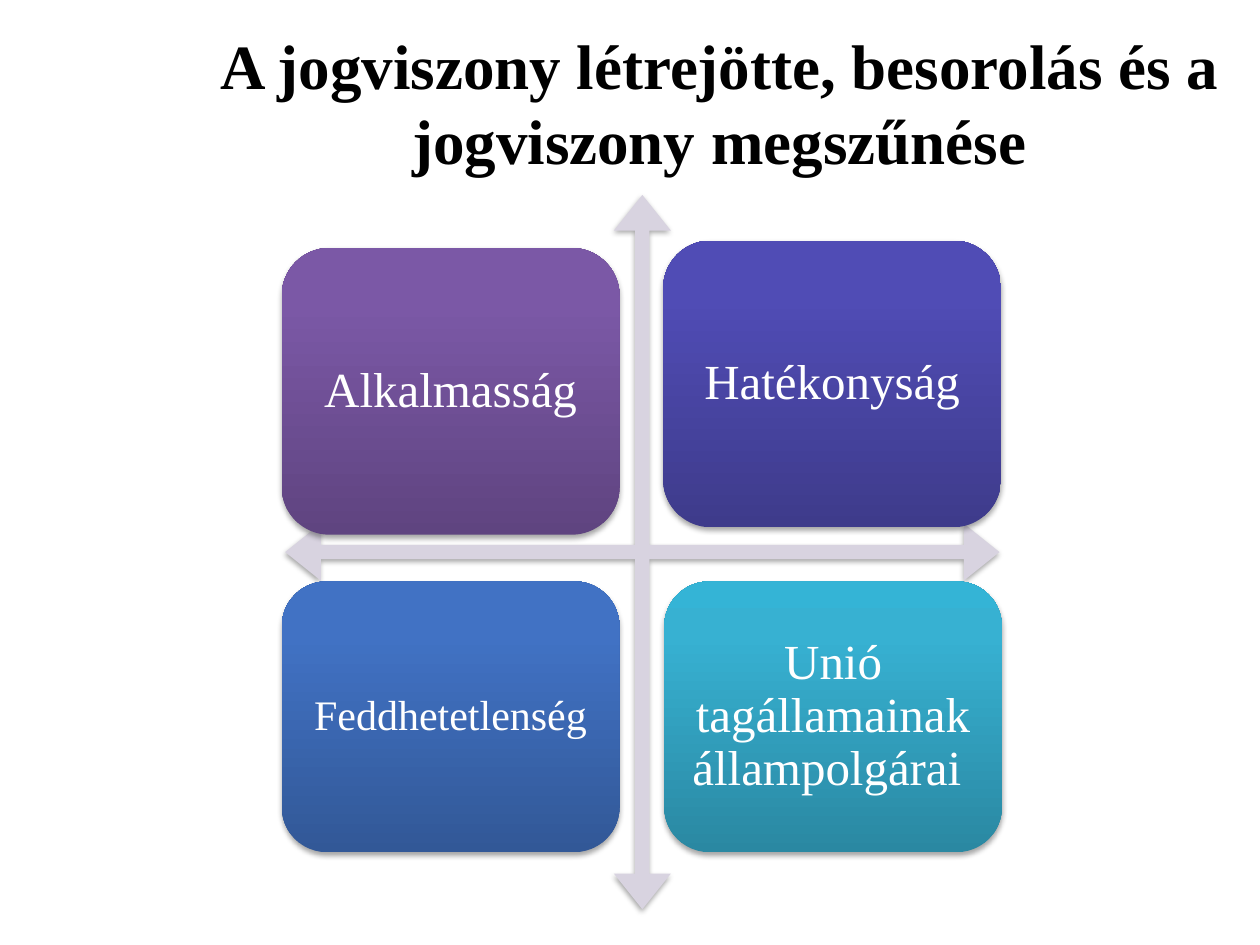
from lxml import etree
from pptx import Presentation, util as u
from pptx.dml.color import RGBColor
from pptx.enum import shapes, text
from pptx.oxml import ns

FONT = "Times New Roman"
COLORS = {"title": "000000", "label": "FFFFFF", "arrow": "D8D3E0", "shadow": "000000"}


def add_soft_shadow(sp):
    sp.shadow.inherit = False
    effects = sp._element.spPr.find(ns.qn("a:effectLst"))
    shadow = etree.SubElement(effects, ns.qn("a:outerShdw"), blurRad=str(u.Pt(3.1)),
                              dist=str(u.Pt(1.8)), dir="5400000", rotWithShape="0")
    color = etree.SubElement(shadow, ns.qn("a:srgbClr"), val=COLORS["shadow"])
    etree.SubElement(color, ns.qn("a:alpha"), val="35000")


def write(tf, words, size, color, bold=False):
    """Put one centred paragraph in the frame and return it."""
    tf.word_wrap = True
    tf.vertical_anchor = text.MSO_ANCHOR.MIDDLE
    p = tf.paragraphs[0]
    p.alignment = text.PP_ALIGN.CENTER
    r = p.add_run()
    r.text = words
    r.font.name, r.font.size, r.font.bold = FONT, u.Pt(size), bold
    r.font.color.rgb = RGBColor.from_string(COLORS[color])
    return p


prs = Presentation()
prs.slide_width, prs.slide_height = u.Cm(25.4), u.Cm(19.05)
s = prs.slides.add_slide(prs.slide_layouts[6])

# Title
title = s.shapes.add_textbox(u.Cm(3.7), u.Cm(0), u.Cm(21.6), u.Cm(4.1))
write(title.text_frame, "A jogviszony létrejötte, besorolás és a jogviszony megszűnése",
      36, "title", bold=True)

# Four-way arrow behind the boxes
arrow = s.shapes.add_shape(shapes.MSO_SHAPE.QUAD_ARROW,
                           u.Cm(5.75), u.Cm(3.93), u.Cm(14.4), u.Cm(14.4))
for i, ratio in enumerate((0.02, 0.04, 0.05)):
    arrow.adjustments[i] = ratio
arrow.fill.solid()
arrow.fill.fore_color.rgb = RGBColor.from_string(COLORS["arrow"])
arrow.line.fill.background()
add_soft_shadow(arrow)

# Boxes: label, size, left, top, height, margin, gradient from bottom to top
boxes = [
    ("Alkalmasság", 28, 5.68, 5.0, 5.78, 0.3, ("5F4480", "7B58A6", "7C57A8")),
    ("Hatékonyság", 28, 13.37, 4.85, 5.78, 0.3, ("3E3B8B", "504CB5", "4F4BB8")),
    ("Feddhetetlenség", 24, 5.68, 11.72, 5.46, 0.25, ("325897", "4172C4", "3F72C7")),
    ("Unió tagállamainak állampolgárai ", 28, 13.39, 11.72, 5.46, 0.3,
     ("2A88A2", "37B1D2", "34B4D6")),
]
for label, size, left, top, height, margin, gradient in boxes:
    sp = s.shapes.add_shape(shapes.MSO_SHAPE.ROUNDED_RECTANGLE,
                            u.Cm(left), u.Cm(top), u.Cm(6.81), u.Cm(height))
    sp.fill.gradient()
    sp.fill.gradient_angle = 90
    stops = sp._element.spPr.find(".//" + ns.qn("a:gsLst"))
    for old in list(stops):
        stops.remove(old)
    for position, color in zip((0, 80, 100), gradient):
        stop = etree.SubElement(stops, ns.qn("a:gs"), pos=str(position * 1000))
        etree.SubElement(stop, ns.qn("a:srgbClr"), val=color)
    sp.line.fill.background()
    add_soft_shadow(sp)

    tf = sp.text_frame
    tf.margin_left = tf.margin_right = tf.margin_top = tf.margin_bottom = u.Cm(margin)
    p = write(tf, label, size, "label")
    p.line_spacing = 0.9

prs.save("out.pptx")
